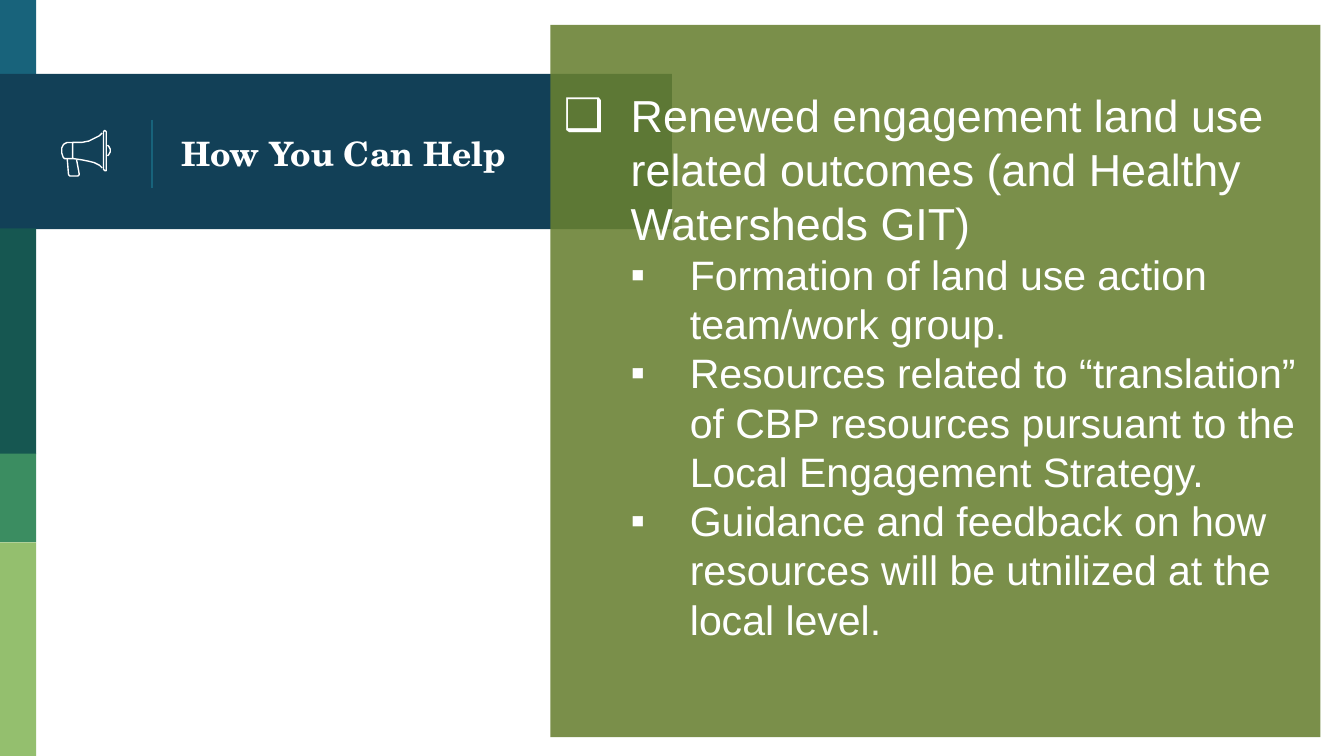
import pptx
import pptx.util
import pptx.dml.color
import pptx.enum.shapes
import pptx.enum.text
import pptx.oxml
import pptx.oxml.ns
from lxml import etree

RGB = pptx.dml.color.RGBColor
WHITE = RGB(0xFF, 0xFF, 0xFF)
BLUE = RGB(0x18, 0x63, 0x7B)
NAVY = RGB(0x12, 0x40, 0x57)
TEAL = RGB(0x16, 0x57, 0x51)
GREEN = RGB(0x3B, 0x8D, 0x61)
LIME = RGB(0x94, 0xBF, 0x6E)
OLIVE = RGB(0x68, 0x80, 0x31)

# 16:9 slide
prs = pptx.Presentation()
prs.slide_width = pptx.util.Inches(10)
prs.slide_height = prs.slide_width * 9 // 16
s = prs.slides.add_slide(prs.slide_layouts[6])

# Square grid, 1000 columns across the slide
U = prs.slide_width // 1000
qn = pptx.oxml.ns.qn


def add_text(p, text, size, font="Arial", bold=False, bullet=None, left=0, hang=0):
    p.alignment = pptx.enum.text.PP_ALIGN.LEFT
    r = p.add_run()
    r.text = text
    r.font.size = pptx.util.Pt(size)
    r.font.name = font
    r.font.bold = bold
    r.font.color.rgb = WHITE
    if bullet:
        pPr = p._p.get_or_add_pPr()
        pPr.set("marL", str(left * U))
        pPr.set("indent", str(-hang * U))
        clr = etree.SubElement(pPr, qn("a:buClr"))
        etree.SubElement(clr, qn("a:srgbClr"), val=str(WHITE))
        etree.SubElement(pPr, qn("a:buFont"), typeface=font)
        etree.SubElement(pPr, qn("a:buChar"), char=bullet)


# Side bands, title banner and, last, the content panel
for x, y, w, h, color in [
    (0, 0, 27, 58, BLUE),
    (0, 55, 500, 115.5, NAVY),
    (0, 170, 27, 168, TEAL),
    (0, 337.5, 27, 66, GREEN),
    (0, 403.5, 27, 159, LIME),
    (409.5, 18.5, 573, 530, OLIVE),
]:
    sp = s.shapes.add_shape(pptx.enum.shapes.MSO_SHAPE.RECTANGLE,
                            int(x * U), int(y * U), int(w * U), int(h * U))
    sp.shadow.inherit = False
    sp.fill.solid()
    sp.fill.fore_color.rgb = color
    sp.line.fill.background()
panel = sp
srgb = panel._element.spPr.find(qn("a:solidFill")).find(qn("a:srgbClr"))
etree.SubElement(srgb, qn("a:alpha"), val="88000")

# Divider beside the icon
line = s.shapes.add_connector(pptx.enum.shapes.MSO_CONNECTOR.STRAIGHT, 113 * U, 89 * U, 113 * U, 140 * U)
line.line.color.rgb = BLUE
line.line.width = pptx.util.Pt(0.75)
etree.SubElement(line._element.spPr, qn("a:effectLst"))

# Title
title = s.shapes.add_textbox(125 * U, 58 * U, 351 * U, 112 * U)
for sp, top, anchor in [
    (title, 10, pptx.enum.text.MSO_ANCHOR.MIDDLE),
    (panel, 47, pptx.enum.text.MSO_ANCHOR.TOP),
]:
    tf = sp.text_frame
    tf.word_wrap = True
    tf.vertical_anchor = anchor
    tf.margin_left = tf.margin_right = tf.margin_bottom = 10 * U
    tf.margin_top = top * U
add_text(title.text_frame.paragraphs[0], "How You Can Help", 18, font="TeX Gyre Schola", bold=True)

# Panel text
tf = panel.text_frame
add_text(tf.paragraphs[0],
         "Renewed engagement land use related outcomes (and Healthy Watersheds GIT)",
         24, bullet="❑", left=50, hang=50)
for level, text in [
    (1, "Formation of land use action team/work group."),
    (3, "Resources related to “translation” of CBP resources pursuant to the Local Engagement Strategy."),
    (3, "Guidance and feedback on how resources will be utnilized at the local level."),
]:
    p = tf.add_paragraph()
    p.level = level
    add_text(p, text, 22, bullet="▪", left=94, hang=44)

# Megaphone icon: handle, sound wave, back, cone, rim
for points, closed in [
    ([(50, 118), (51, 130), (52, 131), (58, 131), (59, 130), (57, 119)], False),
    ([(80, 116), (81, 115), (82, 113), (82, 111), (81, 109), (80, 108)], False),
    ([(54, 106), (50, 106), (48, 107), (47, 108), (46, 110), (46, 114),
      (47, 117), (48, 118), (50, 118), (54, 118)], False),
    ([(76, 99), (74, 101), (70, 103), (66, 105), (61, 106), (54, 106), (54, 118),
      (61, 119), (66, 120), (70, 121), (74, 123), (76, 125)], False),
    ([(79, 98), (78, 97), (77, 98), (77, 126), (78, 127), (79, 127), (79, 126)], True),
]:
    fb = s.shapes.build_freeform(*points[0], scale=U)
    fb.add_line_segments(points[1:], close=closed)
    sp = fb.convert_to_shape()
    sp.shadow.inherit = False
    sp.fill.background()
    sp.line.color.rgb = WHITE
    sp.line.width = pptx.util.Pt(0.75)

prs.save("out.pptx")
